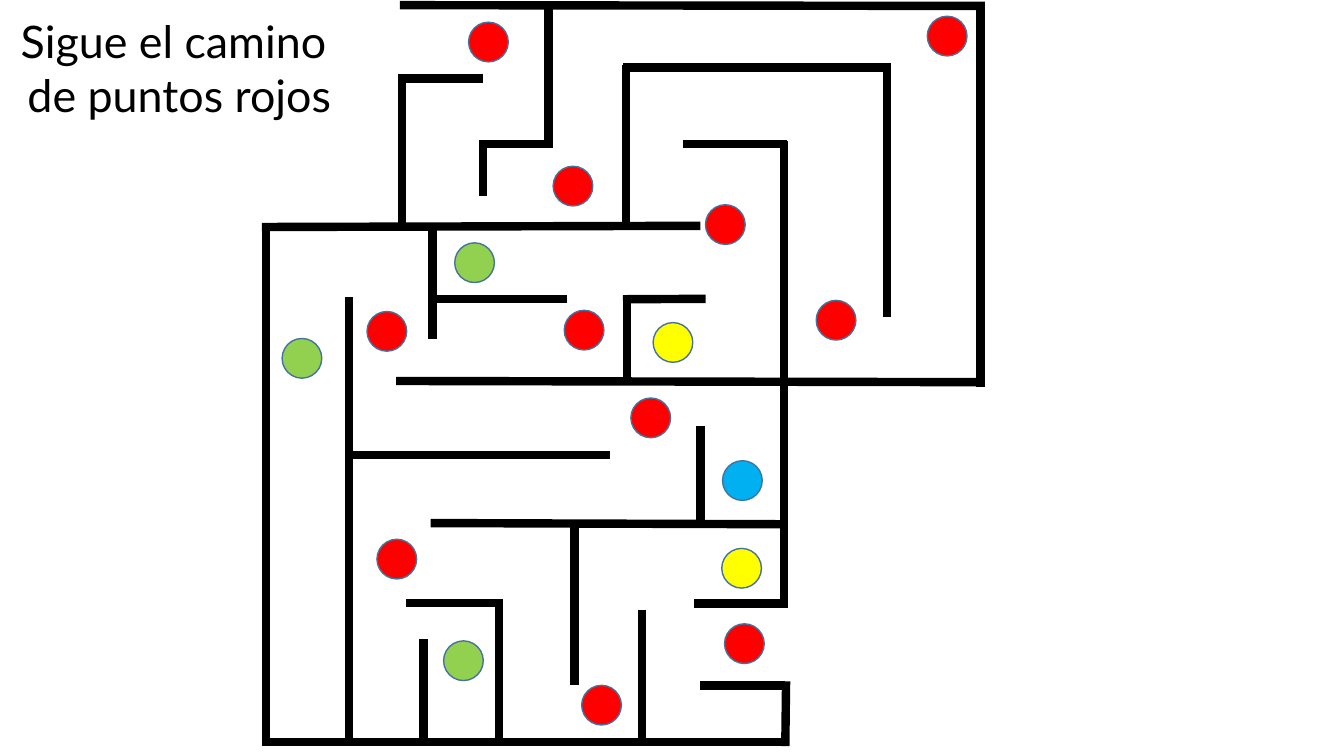
from lxml.etree import SubElement
from pptx import Presentation
from pptx.dml.color import RGBColor
from pptx.enum.shapes import MSO_CONNECTOR as Connector, MSO_SHAPE as Shape
from pptx.enum.text import MSO_ANCHOR as Anchor, MSO_AUTO_SIZE as AutoSize, PP_ALIGN as Align
from pptx.oxml.ns import qn
from pptx.util import Cm, Pt

WALLS = [
    (17.65, 17.27, 19.79, 17.27), (19.79, 18.8, 19.81, 17.17),
    (19.86, 18.69, 6.68, 18.69), (6.71, 5.69, 6.71, 18.8),
    (8.79, 7.49, 8.79, 18.72), (10.67, 16.1, 10.67, 18.69),
    (12.57, 15.11, 12.57, 18.69), (12.67, 15.19, 10.24, 15.19),
    (16.18, 15.37, 16.18, 18.8), (14.48, 13.11, 14.48, 17.27),
    (10.85, 13.18, 19.79, 13.21), (17.5, 15.21, 19.84, 15.21),
    (19.76, 3.56, 19.76, 15.32), (17.22, 3.63, 19.84, 3.63),
    (9.98, 9.6, 24.71, 9.63), (15.37, 11.46, 8.76, 11.46),
    (17.65, 10.74, 17.65, 13.18), (24.71, 0.1, 24.71, 9.75),
    (10.08, 0.13, 24.82, 0.15), (17.65, 5.69, 6.6, 5.72),
    (22.45, 1.7, 15.7, 1.7), (22.35, 1.63, 22.35, 8),
    (15.77, 1.63, 15.77, 5.74), (10.13, 1.93, 10.13, 5.72),
    (12.17, 1.98, 10.03, 1.98), (13.89, 3.63, 12.07, 3.63),
    (12.17, 4.93, 12.17, 3.56), (13.82, 3.73, 13.82, 0.15),
    (10.9, 8.53, 10.9, 5.77), (14.3, 7.54, 10.9, 7.54),
    (17.78, 7.53, 15.7, 7.54), (15.8, 9.63, 15.8, 7.54),
]
DOTS = {
    "FF0000": [(11.81, 0.56), (13.94, 4.19), (23.37, 0.41), (20.57, 7.57),
               (17.78, 5.16), (14.22, 7.82), (9.25, 7.85), (15.9, 10.03),
               (9.5, 13.59), (14.66, 17.27), (18.26, 15.72)],
    "00B0F0": [(18.21, 11.61)],
    "92D050": [(11.18, 16.15), (11.46, 6.12), (7.11, 8.53)],
    "FFFF00": [(18.19, 13.82), (16.46, 8.13)],
}


def color(value):
    return RGBColor.from_string(value)


def write(text_frame, text, font="Lato", size=32, ink="000000", align=Align.CENTER):
    text_frame.text = text
    for paragraph in text_frame.paragraphs:
        paragraph.alignment = align
        paragraph.space_before = Pt(0)
        paragraph.font.name = font
        paragraph.font.size = Pt(size)
        paragraph.font.color.rgb = color(ink)


class Maze:
    """Draws the title, walls and dots of a maze on one slide."""

    wall_color, wall_width = "000000", 6
    outline_color, outline_width = "43739E", 1
    dot_size = 1

    def __init__(self, slide):
        self.slide = slide

    def title(self, text, left, top, width, height):
        title = self.slide.shapes.title
        title.left, title.top, title.width, title.height = map(Cm, (left, top, width, height))
        frame = title.text_frame
        frame.word_wrap = False
        frame.auto_size = AutoSize.SHAPE_TO_FIT_TEXT
        frame.vertical_anchor = Anchor.TOP
        write(frame, text)

    def wall(self, *ends):
        wall = self.slide.shapes.add_connector(Connector.STRAIGHT, *map(Cm, ends))
        wall.line.color.rgb = color(self.wall_color)
        wall.line.width = Pt(self.wall_width)
        SubElement(wall._element.spPr, qn("a:effectLst"))

    def dot(self, left, top, fill):
        size = Cm(self.dot_size)
        dot = self.slide.shapes.add_shape(Shape.OVAL, Cm(left), Cm(top), size, size)
        dot.shadow.inherit = False
        dot.fill.solid()
        dot.fill.fore_color.rgb = color(fill)
        dot.line.color.rgb = color(self.outline_color)
        dot.line.width = Pt(self.outline_width)


def main():
    presentation = Presentation()
    presentation.slide_width, presentation.slide_height = Cm(33.87), Cm(19.05)
    maze = Maze(presentation.slides.add_slide(presentation.slide_layouts[5]))
    maze.title("Sigue el camino \nde puntos rojos", 0.15, 0.23, 8.74, 3)
    for ends in WALLS:
        maze.wall(*ends)
    for fill, places in DOTS.items():
        for left, top in places:
            maze.dot(left, top, fill)
    presentation.save("out.pptx")


if __name__ == "__main__":
    main()
